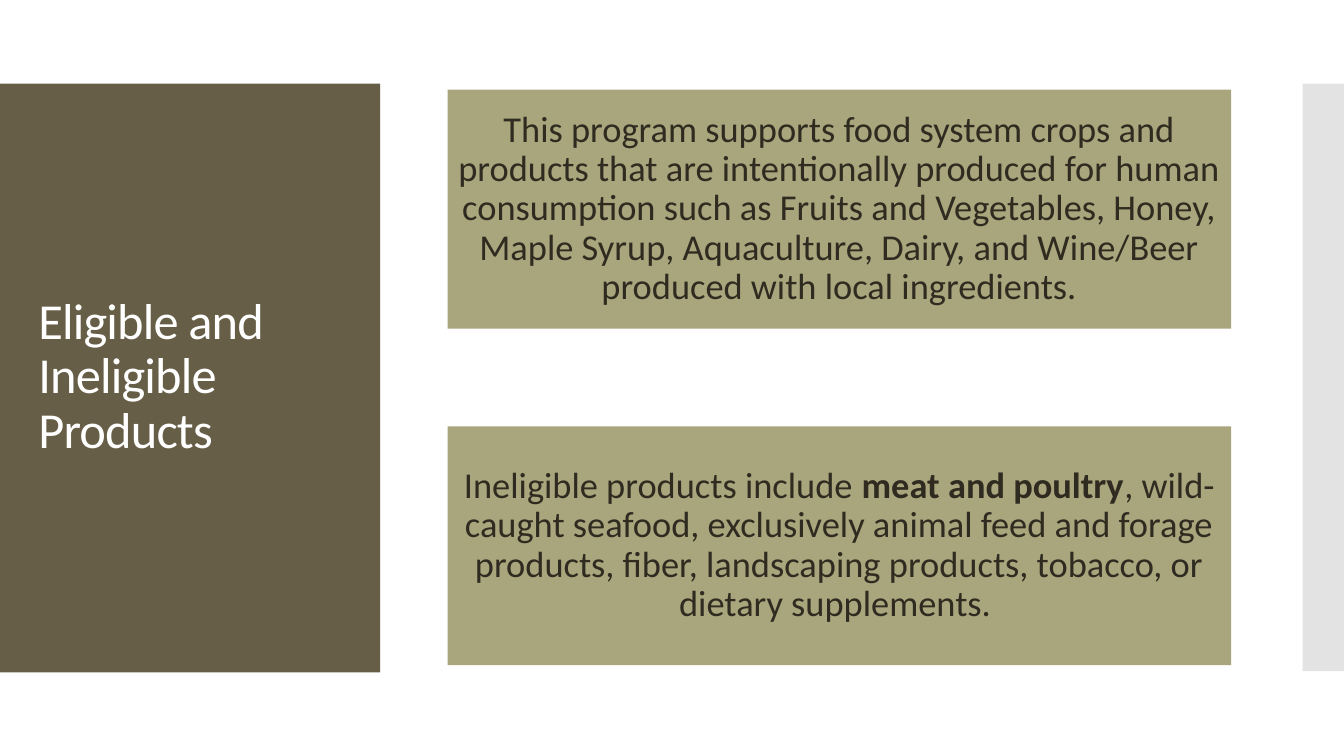
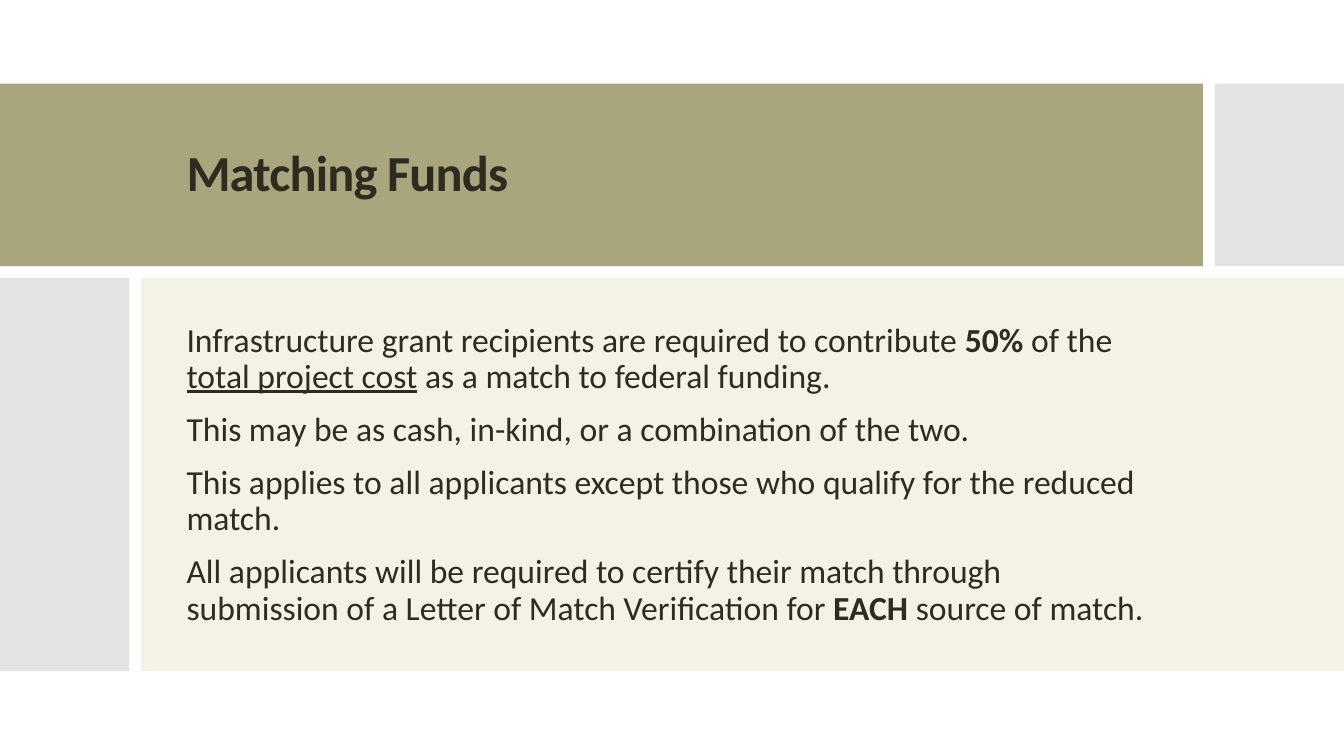
from pptx import Presentation
from pptx.dml.color import RGBColor
from pptx.enum.shapes import MSO_SHAPE
from pptx.enum.text import MSO_ANCHOR, MSO_AUTO_SIZE, PP_ALIGN
from pptx.oxml import parse_xml
from pptx.oxml.ns import nsdecls, qn
from pptx.util import Pt

RECTANGLE = MSO_SHAPE.RECTANGLE
MIDDLE = MSO_ANCHOR.MIDDLE
LEFT, CENTER = PP_ALIGN.LEFT, PP_ALIGN.CENTER
NO_AUTOFIT = MSO_AUTO_SIZE.NONE

# Shared look: 100 px to the inch
EMU_PER_PX = 9144
SLIDE_WIDTH, SLIDE_HEIGHT = 1333, 750
BAND_TOP, BAND_HEIGHT = 83, 583
FONT = "Calibri"
OLIVE, BROWN, GREY, CREAM = "A9A57C", "675E47", "C8C8C8", "ECEAD4"
INK, WHITE = "2F2B20", "FFFFFF"
TITLE_SIZE, CARD_SIZE, BODY_SIZE = 36, 26, 24
TITLE_ONLY, TITLE_AND_BODY = 5, 1

# Text as paragraphs of (words, style) spans
ELIGIBLE = [("This program supports food system crops and products that are "
             "intentionally produced for human consumption such as Fruits and "
             "Vegetables, Honey, Maple Syrup, Aquaculture, Dairy, and Wine/Beer "
             "produced with local ingredients.", "")]
INELIGIBLE = [("Ineligible products include ", ""), ("meat and poultry", "bold"),
              (", wild-caught seafood, exclusively animal feed and forage products, "
               "fiber, landscaping products, tobacco, or dietary supplements. ", "")]
MATCHING_RULES = [
    [("Infrastructure grant recipients are required to contribute ", ""),
     ("50%", "bold"), (" of the ", ""), ("total project cost", "underline"),
     (" as a match to federal funding.", "")],
    [("This may be as cash, in-kind, or a combination of the two.", "")],
    [("This applies to all applicants except those who qualify for the "
      "reduced match.", "")],
    [("All applicants will be required to certify their match through "
      "submission of a Letter of Match Verification for ", ""),
     ("EACH", "bold"), (" source of match.", "")],
]


def px(length):
    return int(length * EMU_PER_PX)


def color(hex_string):
    return RGBColor.from_string(hex_string)


def place(shape, box):
    shape.left, shape.top, shape.width, shape.height = map(px, box)


def add_band(page, box, fill, opacity=100):
    band = page.shapes.add_shape(RECTANGLE, *map(px, box))
    band.shadow.inherit = False
    band.fill.solid()
    band.fill.fore_color.rgb = color(fill)
    band.line.fill.background()
    if opacity < 100:
        tint = band.element.spPr.find(".//" + qn("a:srgbClr"))
        tint.append(parse_xml(f'<a:alpha {nsdecls("a")} val="{opacity * 1000}"/>'))
    return band


def prepare_frame(shape, margin=None):
    frame = shape.text_frame
    frame.word_wrap = True
    frame.auto_size = NO_AUTOFIT
    frame.vertical_anchor = MIDDLE
    if margin is not None:
        frame.margin_left = frame.margin_right = px(margin)
        frame.margin_top = frame.margin_bottom = px(margin)
    return frame


def format_span(span, size, ink, style=""):
    span.font.name = FONT
    span.font.size = Pt(size)
    span.font.color.rgb = color(ink)
    span.font.bold = style == "bold"
    span.font.underline = style == "underline"


def format_para(para, align, before=0):
    para.alignment = align
    para.line_spacing = 0.9
    para.space_before = Pt(before)
    para.space_after = Pt(0)


def write_spans(para, spans, size):
    for words, style in spans:
        span = para.add_run()
        span.text = words
        format_span(span, size, INK, style)


def set_title(page, box, text, ink, style=""):
    title = page.shapes.title
    place(title, box)
    para = prepare_frame(title).paragraphs[0]
    para.text = text
    format_para(para, LEFT)
    for span in para.runs:
        format_span(span, TITLE_SIZE, ink, style)
        span.font.element.set("spc", "-60") if hasattr(span.font, "element") \
            else span.font._rPr.set("spc", "-60")
    bring_to_front(page, title)


def bring_to_front(page, shape):
    page.shapes.element.append(shape.element)


def add_cards(page, box, cards, card_height):
    left, top, width, height = box
    step = (height - card_height) / (len(cards) - 1)
    for index, spans in enumerate(cards):
        card = add_band(page, (left, top + index * step, width, card_height), OLIVE)
        para = prepare_frame(card, margin=2).paragraphs[0]
        format_para(para, CENTER)
        write_spans(para, spans, CARD_SIZE)


def set_body(page, box, paragraphs):
    body = page.placeholders[1]
    place(body, box)
    frame = prepare_frame(body)
    for index, spans in enumerate(paragraphs):
        para = frame.paragraphs[0] if index == 0 else frame.add_paragraph()
        format_para(para, LEFT, before=12)
        write_spans(para, spans, BODY_SIZE)
        # No bullet and no hanging indent
        properties = para._p.get_or_add_pPr()
        properties.set("marL", "0")
        properties.set("indent", "0")
        properties.append(parse_xml(f'<a:buNone {nsdecls("a")}/>'))
    bring_to_front(page, body)


def add_staggered_bands(page, box):
    """Two rows of bands, each with a grey stub at the opposite end."""
    left, top, width, height = box
    header, stub, gap = 181, 128, 12
    wide = width - stub - gap
    lower_top = top + header + gap
    lower = height - header - gap
    add_band(page, (left, top, wide, header), OLIVE)
    add_band(page, (left + wide + gap, top, stub, header), GREY, 50)
    add_band(page, (left, lower_top, stub, lower), GREY, 50)
    add_band(page, (left + stub + gap, lower_top, wide, lower), CREAM, 60)


def build_products_slide(deck):
    page = deck.slides.add_slide(deck.slide_layouts[TITLE_ONLY])
    # Side panels
    add_band(page, (0, BAND_TOP, 377, BAND_HEIGHT + 1), BROWN)
    add_band(page, (1292, BAND_TOP, SLIDE_WIDTH - 1292, BAND_HEIGHT), GREY, 50)
    set_title(page, (28, 123, 322, 503), "Eligible and Ineligible\vProducts", WHITE)
    add_cards(page, (444, 89, 777, 571), [ELIGIBLE, INELIGIBLE], 237)


def build_matching_slide(deck):
    page = deck.slides.add_slide(deck.slide_layouts[TITLE_AND_BODY])
    add_staggered_bands(page, (0, BAND_TOP, SLIDE_WIDTH, BAND_HEIGHT))
    set_title(page, (175, 119, 982, 109), "Matching Funds", INK, "bold")
    set_body(page, (175, 277, 982, 389), MATCHING_RULES)


def main():
    deck = Presentation()
    deck.slide_width, deck.slide_height = px(SLIDE_WIDTH), px(SLIDE_HEIGHT)
    build_products_slide(deck)
    build_matching_slide(deck)
    deck.save("out.pptx")


if __name__ == "__main__":
    main()
